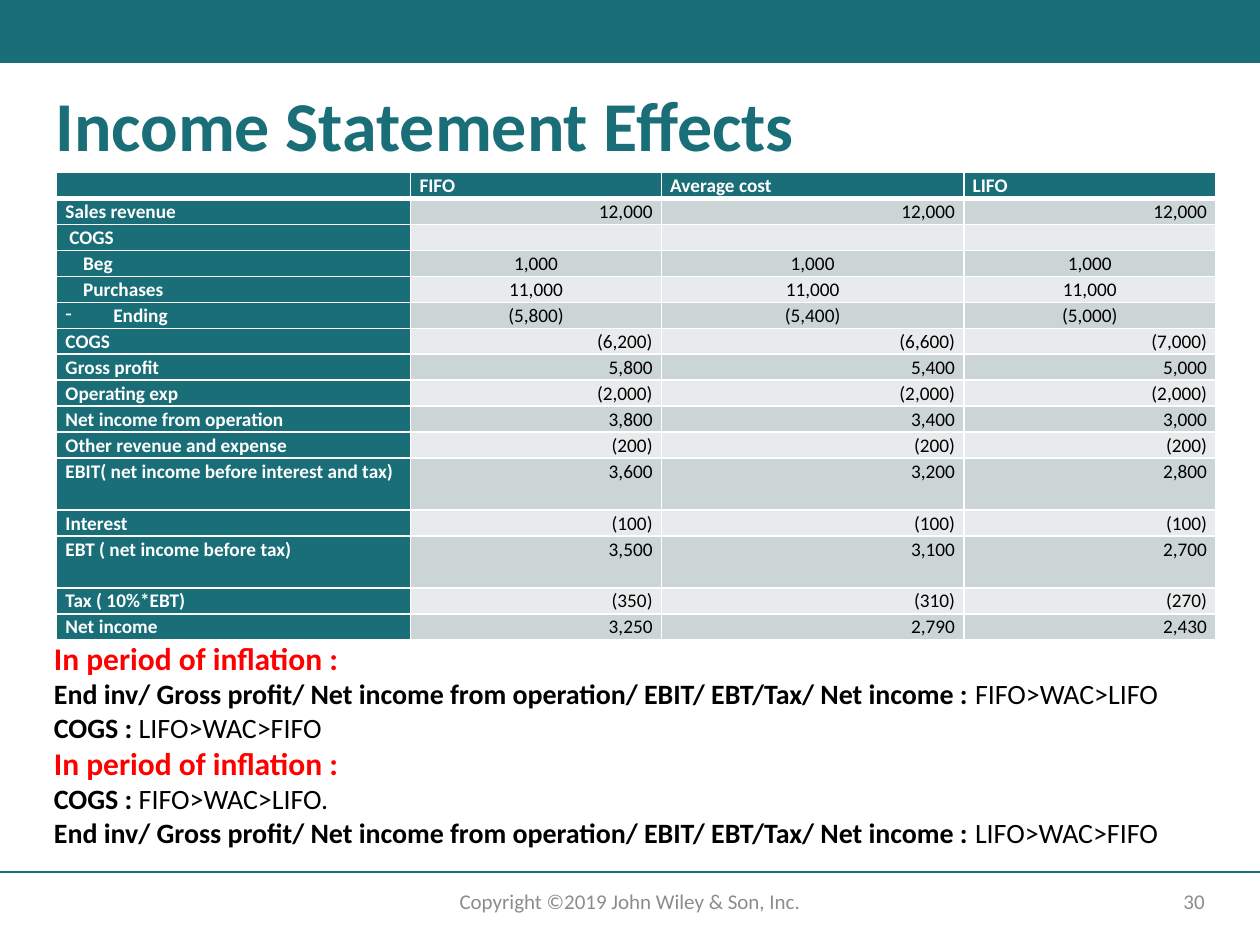
from lxml import etree
from pptx import Presentation
from pptx.dml.color import RGBColor
from pptx.enum.shapes import MSO_CONNECTOR, MSO_SHAPE
from pptx.enum.text import MSO_ANCHOR, MSO_AUTO_SIZE, PP_ALIGN
from pptx.oxml.ns import qn
from pptx.util import Inches, Pt

LEFT, CENTER, RIGHT = PP_ALIGN.LEFT, PP_ALIGN.CENTER, PP_ALIGN.RIGHT
TOP, MIDDLE = MSO_ANCHOR.TOP, MSO_ANCHOR.MIDDLE
RECTANGLE, STRAIGHT = MSO_SHAPE.RECTANGLE, MSO_CONNECTOR.STRAIGHT
NO_AUTOFIT = MSO_AUTO_SIZE.NONE

TEAL, WHITE, BLACK, RED, GRAY = "196E78", "FFFFFF", "000000", "FF0000", "8C8C8C"
BANDS = ("CCD5D6", "E8EBEC")

HEADERS = ("", "FIFO", "Average cost", "LIFO")
COLUMN_WIDTHS = (2.81, 1.99, 2.4, 2)
TABLE_HEIGHT = 3.71
STATEMENT = [
    ("Sales revenue", "12,000", "12,000", "12,000"),
    ("COGS", "", "", ""),
    ("Beg", "1,000", "1,000", "1,000"),
    ("Purchases", "11,000", "11,000", "11,000"),
    ("Ending", "(5,800)", "(5,400)", "(5,000)"),
    ("COGS", "(6,200)", "(6,600)", "(7,000)"),
    ("Gross profit", "5,800", "5,400", "5,000"),
    ("Operating exp", "(2,000)", "(2,000)", "(2,000)"),
    ("Net income from operation", "3,800", "3,400", "3,000"),
    ("Other revenue and expense", "(200)", "(200)", "(200)"),
    ("EBIT( net income before interest and tax)", "3,600", "3,200", "2,800"),
    ("Interest", "(100)", "(100)", "(100)"),
    ("EBT ( net income before tax)", "3,500", "3,100", "2,700"),
    ("Tax ( 10%*EBT)", "(350)", "(310)", "(270)"),
    ("Net income", "3,250", "2,790", "2,430"),
]
CENTERED_ROWS = (3, 4, 5)
DOUBLE_ROWS = (11, 13)
INDENTS = {2: 0.03, 3: 0.14, 4: 0.14}
DASH_ROW = 5

INFLATION = "In period of inflation :"
PROFITS = "End inv/ Gross profit/ Net income from operation/ EBIT/ EBT/Tax/ Net income :"
NOTES = [
    (INFLATION, ""),
    (PROFITS, " FIFO>WAC>LIFO"),
    ("COGS :", " LIFO>WAC>FIFO"),
    (INFLATION, ""),
    ("COGS :", " FIFO>WAC>LIFO."),
    (PROFITS, " LIFO>WAC>FIFO"),
]


def rgb(value):
    """Turn a hex string into a colour."""
    return RGBColor.from_string(value)


class SlideBuilder:
    """Hold the style and the current slide, and add elements to it."""

    font_name = "Calibri"

    def __init__(self, page):
        """Keep the slide to draw on."""
        self.page = page

    def style(self, font, size, color, bold=False):
        """Apply the slide's typeface to a font."""
        font.name, font.size, font.bold = self.font_name, Pt(size), bold
        font.color.rgb = rgb(color)

    def band(self, left, top, width, height, color):
        """Add a plain filled rectangle."""
        shape = self.page.shapes.add_shape(
            RECTANGLE, Inches(left), Inches(top), Inches(width), Inches(height))
        shape.shadow.inherit = False
        shape.fill.solid()
        shape.fill.fore_color.rgb = rgb(color)
        shape.line.fill.background()

    def rule(self, top, color):
        """Add a full-width horizontal line."""
        line = self.page.shapes.add_connector(
            STRAIGHT, 0, Inches(top), Inches(10), Inches(top))
        line.line.color.rgb = rgb(color)
        line.line.width = Pt(1)
        etree.SubElement(line._element.spPr, qn("a:effectLst"))

    def title(self, text, left, top, width, height):
        """Place and format the title placeholder."""
        title = self.page.shapes.title
        title.left, title.top = Inches(left), Inches(top)
        title.width, title.height = Inches(width), Inches(height)
        frame = title.text_frame
        frame.text = text
        frame.auto_size, frame.vertical_anchor = NO_AUTOFIT, TOP
        para = frame.paragraphs[0]
        para.alignment, para.line_spacing = LEFT, 0.9
        self.style(para.runs[0].font, 40, TEAL, True)

    def text_box(self, left, top, width, height, anchor=TOP):
        """Add a wrapping text box and return its frame."""
        box = self.page.shapes.add_textbox(
            Inches(left), Inches(top), Inches(width), Inches(height))
        frame = box.text_frame
        frame.word_wrap, frame.vertical_anchor = True, anchor
        return frame

    def footer(self, text, left, width, alignment):
        """Add a gray text in the footer strip."""
        frame = self.text_box(left, 6.95, width, 0.4, MIDDLE)
        frame.text = text
        para = frame.paragraphs[0]
        para.alignment = alignment
        self.style(para.runs[0].font, 12, GRAY)

    def notes(self, lines, left, top, width, height):
        """Add lines that pair a bold label with a plain ranking."""
        frame = self.text_box(left, top, width, height)
        for number, (label, ranking) in enumerate(lines):
            para = frame.add_paragraph() if number else frame.paragraphs[0]
            para.text = label
            size, color = (16, BLACK) if ranking else (18, RED)
            self.style(para.runs[0].font, size, color, True)
            if ranking:
                span = para.add_run()
                span.text = ranking
                self.style(span.font, size, color)

    def borders(self, cell, top, bottom):
        """Draw white borders, with the top and bottom widths in points."""
        properties = cell._tc.get_or_add_tcPr()
        for side, width in zip("LRTB", (1, 1, top, bottom)):
            line = etree.SubElement(properties, qn(f"a:ln{side}"), w=str(Pt(width)))
            fill = etree.SubElement(line, qn("a:solidFill"))
            etree.SubElement(fill, qn("a:srgbClr"), val=WHITE)

    def cell(self, cell, text, row, column):
        """Fill and format one cell of the statement."""
        is_heading = row == 0 or column == 0
        self.borders(cell, 3 if row == 1 else 1, 3 if row == 0 else 1)
        cell.fill.solid()
        cell.fill.fore_color.rgb = rgb(TEAL if is_heading else BANDS[(row - 1) % 2])
        cell.margin_left = cell.margin_right = Inches(0.07)
        cell.margin_top = cell.margin_bottom = 0
        para = cell.text_frame.paragraphs[0]
        para.line_spacing = 1.07
        if not text:
            etree.SubElement(para._p, qn("a:endParaRPr"), sz="1100")
            return
        para.text = text
        if is_heading:
            para.alignment = LEFT
        else:
            para.alignment = CENTER if row in CENTERED_ROWS else RIGHT
        if column == 0:
            self.indent(para, row)
        self.style(para.runs[0].font, 11, WHITE if is_heading else BLACK, is_heading)

    def indent(self, para, row):
        """Indent a row label, with a dash on the deducted row."""
        properties = para._p.get_or_add_pPr()
        if row == DASH_ROW:
            properties.set("marL", str(Inches(0.38)))
            properties.set("indent", str(-Inches(0.38)))
            etree.SubElement(properties, qn("a:buChar"), char="-")
        elif row in INDENTS:
            properties.set("marL", str(Inches(INDENTS[row])))

    def table(self, rows, left, top):
        """Add the statement table."""
        table = self.page.shapes.add_table(
            len(rows), len(COLUMN_WIDTHS), Inches(left), Inches(top),
            Inches(sum(COLUMN_WIDTHS)), Inches(TABLE_HEIGHT)).table
        for column, width in zip(table.columns, COLUMN_WIDTHS):
            column.width = Inches(width)
        row_height = TABLE_HEIGHT / (len(rows) + len(DOUBLE_ROWS))
        for row, values in enumerate(rows):
            table.rows[row].height = Inches(row_height * (2 if row in DOUBLE_ROWS else 1))
            for column, text in enumerate(values):
                self.cell(table.cell(row, column), text, row, column)


def main():
    """Build the slide and save the deck."""
    deck = Presentation()
    deck.slide_width, deck.slide_height = Inches(10), Inches(7.5)
    builder = SlideBuilder(deck.slides.add_slide(deck.slide_layouts[5]))
    builder.band(0, 0, 10, 0.5, TEAL)
    builder.rule(6.92, TEAL)
    builder.footer("30", 7.06, 2.6, RIGHT)
    builder.footer("Copyright ©2019 John Wiley & Son, Inc.", 3.31, 3.38, CENTER)
    builder.title("Income Statement Effects", 0.34, 0.67, 9.33, 0.71)
    builder.table([HEADERS, *STATEMENT], 0.45, 1.37)
    builder.notes(NOTES, 0.33, 5.02, 9.19, 2.05)
    deck.save("out.pptx")


if __name__ == "__main__":
    main()
